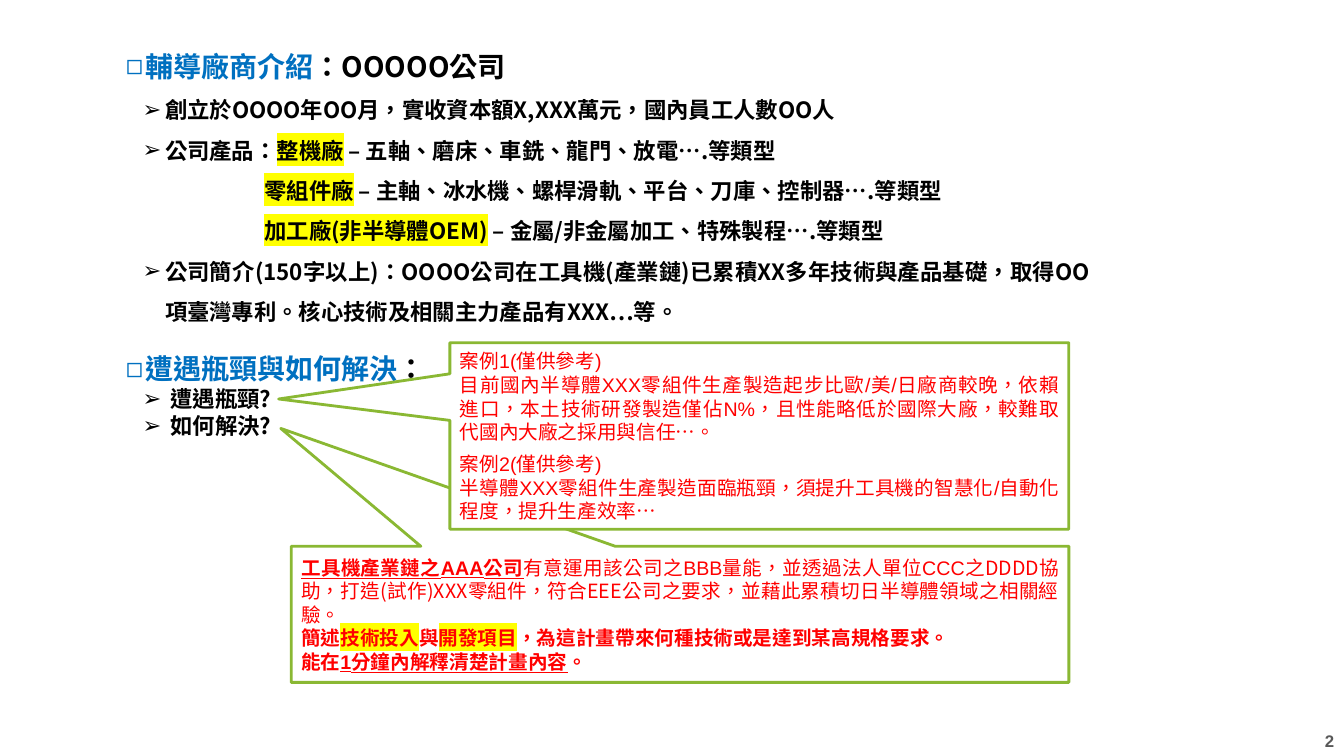
from dataclasses import dataclass

from lxml.etree import SubElement
from pptx import Presentation
from pptx.dml.color import RGBColor
from pptx.enum.lang import MSO_LANGUAGE_ID as Lang
from pptx.enum.shapes import MSO_SHAPE as Shape
from pptx.enum.text import MSO_ANCHOR as Anchor, MSO_AUTO_SIZE as AutoSize, PP_ALIGN as Align
from pptx.oxml.ns import qn
from pptx.util import Pt


@dataclass(frozen=True)
class Theme:
    black: str = "000000"
    blue: str = "0070C0"
    red: str = "FF0000"
    green: str = "8AB833"
    grey: str = "595959"
    white: str = "FFFFFF"
    yellow: str = "FFFF00"
    heading: int = 20
    body: int = 16
    case: int = 14
    number: int = 12
    cjk: str = "Noto Sans CJK SC"
    latin: str = "Arial"
    leading: float = 1.2


THEME = Theme()
TITLE = dict(size=THEME.heading, color=THEME.blue, bold=True)
TITLE_END = TITLE | dict(color=THEME.black)
BODY = dict(size=THEME.body, color=THEME.black, bold=True)
BODY_MARK = BODY | dict(highlight=THEME.yellow)
CASE = dict(size=THEME.case, color=THEME.red, name=THEME.latin)
CASE_CJK = CASE | dict(name=THEME.cjk)
CASE_BOLD = CASE | dict(bold=True)
CASE_MARK = CASE_BOLD | dict(highlight=THEME.yellow)
CASE_LINE = CASE_BOLD | dict(underline=True)
NUMBER = dict(size=THEME.number, color=THEME.grey, name=THEME.latin, bold=True)

SECTION = dict(margin=14, hang=14, bullet="◻")
POINT = dict(margin=28, hang=16, bullet="➢", spacing=1.5)
PRODUCT = dict(margin=99, spacing=1.5)
QUESTION = dict(margin=32, hang=20, bullet="➢")

INTRODUCTION = [
    (SECTION, [("輔導廠商介紹", TITLE), ("：OOOOO公司", TITLE_END)]),
    (POINT, [("創立於OOOO年OO月，實收資本額X,XXX萬元，國內員工人數OO人", BODY)]),
    (POINT, [("公司產品：", BODY), ("整機廠", BODY_MARK),
             (" – 五軸、磨床、車銑、龍門、放電….等類型", BODY)]),
    (PRODUCT, [("零組件廠", BODY_MARK),
               (" – 主軸、冰水機、螺桿滑軌、平台、刀庫、控制器….等類型", BODY)]),
    (PRODUCT, [("加工廠(非半導體OEM)", BODY_MARK),
               (" – 金屬/非金屬加工、特殊製程….等類型", BODY)]),
    (POINT, [("公司簡介(150字以上)：OOOO公司在工具機(產業鏈)已累積XX多年技術與產品基礎，"
              "取得OO項臺灣專利。核心技術及相關主力產品有XXX…等。", BODY)]),
    (SECTION | dict(before=19.2), [("遭遇瓶頸與如何解決", TITLE), ("：", TITLE_END)]),
    (QUESTION, [("遭遇瓶頸?", BODY)]),
    (QUESTION, [("如何解決?", BODY)]),
]
SOLUTION = [
    ({}, [("工具機產業鏈之AAA公司", CASE_LINE),
          ("有意運用該公司之BBB量能，並透過法人單位CCC之", CASE),
          ("DDDD協助，打造(試作)XXX零組件，符合EEE公司之要求，"
           "並藉此累積切日半導體領域之相關經驗。", CASE_CJK)]),
    ({}, [("簡述", CASE_BOLD), ("技術投入", CASE_MARK), ("與", CASE_BOLD),
          ("開發項目", CASE_MARK),
          ("，為這計畫帶來何種技術或是達到某高規格要求。", CASE_BOLD)]),
    ({}, [("能在", CASE_BOLD), ("1分鐘內解釋清楚計畫內容", CASE_LINE), ("。", CASE_BOLD)]),
]
CASES = [
    ({}, [("案例1(僅供參考)", CASE)]),
    ({}, [("目前國內半導體XXX零組件生產製造起步比歐/美/日廠商較晚，依賴進口，"
           "本土技術研發製造僅佔N%，且性能略低於國際大廠，較難取代國內大廠之採用與信任…。", CASE)]),
    (dict(before=6), [("案例2(僅供參考)", CASE)]),
    ({}, [("半導體XXX零組件生產製造面臨瓶頸，須提升工具機的智慧化/自動化程度，提升生產效率…", CASE)]),
]


def write_run(paragraph, text, style):
    run = paragraph.add_run()
    run.text = text
    font = run.font
    values = dict(name=THEME.cjk, bold=False, language_id=Lang.TRADITIONAL_CHINESE) | style
    color, highlight = values.pop("color"), values.pop("highlight", None)
    values["size"] = Pt(values["size"])
    for key, value in values.items():
        setattr(font, key, value)
    font.color.rgb = RGBColor.from_string(color)
    properties = run._r.get_or_add_rPr()
    latin = properties.find(qn("a:latin"))
    if highlight:
        marker = SubElement(properties, qn("a:highlight"))
        SubElement(marker, qn("a:srgbClr")).set("val", highlight)
        latin.addprevious(marker)
    east_asian = SubElement(properties, qn("a:ea"))
    east_asian.set("typeface", THEME.cjk)
    latin.addnext(east_asian)


def write_text(frame, content, align=Align.JUSTIFY):
    frame.word_wrap = True
    for index, (layout, runs) in enumerate(content):
        paragraph = frame.add_paragraph() if index else frame.paragraphs[0]
        size = runs[0][1]["size"]
        line = size * THEME.leading * layout.get("spacing", 1)
        values = dict(alignment=align, line_spacing=Pt(line),
                      space_before=Pt(layout.get("before", 0)))
        for key, value in values.items():
            setattr(paragraph, key, value)
        properties = paragraph._p.get_or_add_pPr()
        properties.set("marL", str(Pt(layout.get("margin", 0))))
        properties.set("indent", str(-Pt(layout.get("hang", 0))))
        if "bullet" in layout:
            SubElement(properties, qn("a:buFont")).set("typeface", THEME.latin)
            SubElement(properties, qn("a:buChar")).set("char", layout["bullet"])
        for text, style in runs:
            write_run(paragraph, text, style)


def add_introduction(slide, box):
    frame = slide.shapes.add_textbox(*map(Pt, box)).text_frame
    write_text(frame, INTRODUCTION)
    frame.auto_size = AutoSize.SHAPE_TO_FIT_TEXT


def add_callout(slide, box, tip, content):
    left, top, width, height = box
    callout = slide.shapes.add_shape(Shape.RECTANGULAR_CALLOUT, *map(Pt, box))
    callout.adjustments[0] = (tip[0] - left) / width - 0.5
    callout.adjustments[1] = (tip[1] - top) / height - 0.5
    callout.shadow.inherit = False
    callout.fill.solid()
    callout.fill.fore_color.rgb = RGBColor.from_string(THEME.white)
    callout.line.color.rgb = RGBColor.from_string(THEME.green)
    callout.line.width = Pt(2)
    callout.text_frame.vertical_anchor = Anchor.MIDDLE
    write_text(callout.text_frame, content)


def add_page_number(slide, box):
    frame = slide.shapes.add_textbox(*map(Pt, box)).text_frame
    frame.vertical_anchor = Anchor.MIDDLE
    write_text(frame, [({}, [("2", NUMBER)])], Align.RIGHT)


def main():
    deck = Presentation()
    deck.slide_width, deck.slide_height = Pt(960), Pt(540)
    slide = deck.slides.add_slide(deck.slide_layouts[6])
    add_page_number(slide, (900, 520, 60, 18.7))
    add_introduction(slide, (82.8, 31.7, 702.7, 370.8))
    add_callout(slide, (208, 390.2, 555.5, 97.2), (200.5, 306), SOLUTION)
    add_callout(slide, (321.4, 244.8, 442.1, 133.2), (199, 285), CASES)
    deck.save("out.pptx")


if __name__ == "__main__":
    main()
